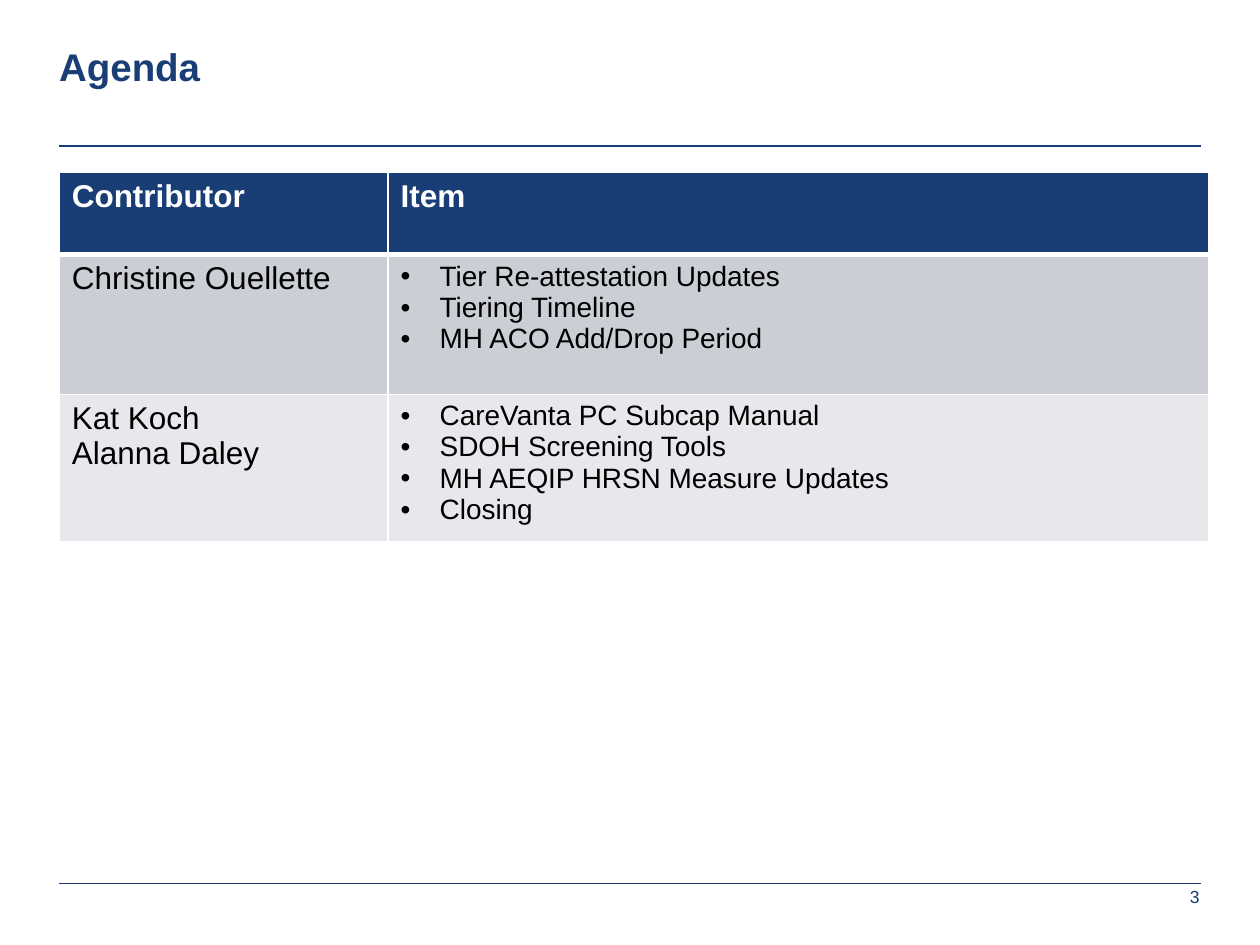
import pptx
import pptx.dml.color
import pptx.enum.shapes
import pptx.enum.text
import pptx.oxml
import pptx.oxml.ns
import pptx.util
from pptx.util import Inches

NAVY, WHITE, BLACK = "183E75", "FFFFFF", "000000"
FONT = "Arial"
LEFT, RIGHT = 0.47, 9.53
COLUMN_WIDTHS = [2.61, 6.51]
ROW_HEIGHTS = [0.65, 1.11, 1.11]
ROW_FILLS = [NAVY, "CCCED6", "E8E8EC"]
AGENDA = [
    (["Contributor"], ["Item"]),
    (["Christine Ouellette"],
     ["Tier Re-attestation Updates", "Tiering Timeline", "MH ACO Add/Drop Period"]),
    (["Kat Koch", "Alanna Daley"],
     ["CareVanta PC Subcap Manual", "SDOH Screening Tools",
      "MH AEQIP HRSN Measure Updates", "Closing"]),
]


def rgb(hex_color):
    return pptx.dml.color.RGBColor.from_string(hex_color)


def style_text(paragraph, size, color, bold=False):
    for run in paragraph.runs:
        run.font.name = FONT
        run.font.size = pptx.util.Pt(size)
        run.font.bold = bold
        run.font.color.rgb = rgb(color)


def add_rule(slide, y):
    rule = slide.shapes.add_connector(
        pptx.enum.shapes.MSO_CONNECTOR.STRAIGHT,
        Inches(LEFT), Inches(y), Inches(RIGHT), Inches(y))
    rule.line.color.rgb = rgb(NAVY)
    rule.line.width = pptx.util.Pt(0.75)
    pptx.oxml.ns.qn("a:effectLst")
    rule._element.spPr.append(
        pptx.oxml.parse_xml(f"<a:effectLst {pptx.oxml.ns.nsdecls('a')}/>"))


def add_label(slide, text, box, size, bold=False, align=pptx.enum.text.PP_ALIGN.LEFT):
    frame = slide.shapes.add_textbox(*map(Inches, box)).text_frame
    frame.word_wrap = True
    frame.margin_left = frame.margin_right = frame.margin_top = frame.margin_bottom = 0
    frame.text = text
    frame.paragraphs[0].alignment = align
    style_text(frame.paragraphs[0], size, NAVY, bold)


def add_bullet(paragraph, indent=0.31):
    properties = paragraph._p.get_or_add_pPr()
    properties.set("marL", str(Inches(indent)))
    properties.set("indent", str(-Inches(indent)))
    for tag in ('buFont {} typeface="Arial"', 'buChar {} char="•"'):
        properties.append(pptx.oxml.parse_xml(
            f"<a:{tag.format(pptx.oxml.ns.nsdecls('a'))}/>"))


def set_borders(cell, widths):
    """Draw white borders, with widths in points for left, right, top and bottom."""
    properties = cell._tc.get_or_add_tcPr()
    for position, (side, width) in enumerate(zip("LRTB", widths)):
        properties.insert(position, pptx.oxml.parse_xml(
            f'<a:ln{side} {pptx.oxml.ns.nsdecls("a")} w="{pptx.util.Pt(width)}">'
            f'<a:solidFill><a:srgbClr val="{WHITE}"/></a:solidFill></a:ln{side}>'))


def fill_cell(cell, lines, row, column):
    is_header = row == 0
    is_item = column == 1 and not is_header
    cell.fill.solid()
    cell.fill.fore_color.rgb = rgb(ROW_FILLS[row])
    set_borders(cell, (1, 1, 3 if row == 1 else 1, 3 if is_header else 1))
    cell.text_frame.text = "\n".join(lines)
    for paragraph in cell.text_frame.paragraphs:
        if is_item:
            add_bullet(paragraph)
        style_text(paragraph, 16 if is_item else 18,
                   WHITE if is_header else BLACK, is_header)


def add_agenda_table(slide):
    table = slide.shapes.add_table(
        len(AGENDA), len(COLUMN_WIDTHS), Inches(LEFT), Inches(1.37),
        Inches(sum(COLUMN_WIDTHS)), Inches(sum(ROW_HEIGHTS))).table
    for column, width in zip(table.columns, COLUMN_WIDTHS):
        column.width = Inches(width)
    for row, height in zip(table.rows, ROW_HEIGHTS):
        row.height = Inches(height)
    for row, entries in enumerate(AGENDA):
        for column, lines in enumerate(entries):
            fill_cell(table.cell(row, column), lines, row, column)


def main():
    presentation = pptx.Presentation()
    presentation.slide_width = Inches(10)
    presentation.slide_height = Inches(7.5)
    slide = presentation.slides.add_slide(presentation.slide_layouts[6])
    for y in (7.01, 1.16):
        add_rule(slide, y)
    add_label(slide, "Agenda", (LEFT, 0.34, 9.05, 0.75), 22, bold=True)
    add_label(slide, "3", (8.56, 7.03, 0.96, 0.26), 10,
              align=pptx.enum.text.PP_ALIGN.RIGHT)
    add_agenda_table(slide)
    presentation.save("out.pptx")


if __name__ == "__main__":
    main()
